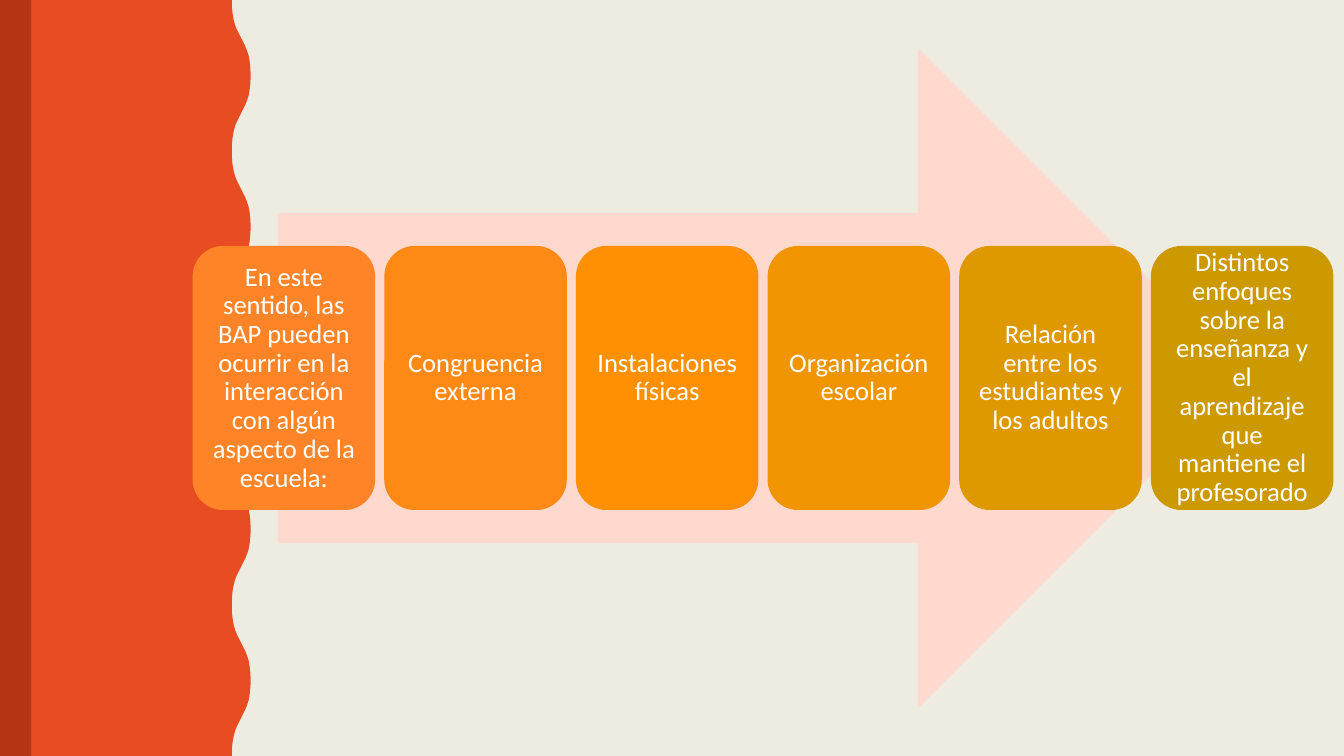
"""Build a slide of six rounded boxes in a row over a wide arrow."""
from pptx import Presentation
from pptx.dml.color import RGBColor
from pptx.enum.shapes import MSO_SHAPE
from pptx.enum.text import MSO_ANCHOR, PP_ALIGN
from pptx.util import Pt

CREAM = RGBColor(0xEE, 0xEC, 0xE1)
RED = RGBColor(0xE8, 0x4C, 0x22)
RUST = RGBColor(0xB5, 0x35, 0x13)
PINK = RGBColor(0xFF, 0xD9, 0xCD)
WHITE = RGBColor(0xFF, 0xFF, 0xFF)

BOXES = [
    ("En este sentido, las BAP pueden ocurrir en la interacción con algún "
     "aspecto de la escuela:", RGBColor(0xFF, 0x84, 0x27)),
    ("Congruencia externa", RGBColor(0xFF, 0x89, 0x15)),
    ("Instalaciones físicas", RGBColor(0xFF, 0x90, 0x03)),
    ("Organización escolar", RGBColor(0xF0, 0x95, 0x00)),
    ("Relación entre los estudiantes y los adultos",
     RGBColor(0xDE, 0x98, 0x00)),
    ("Distintos enfoques sobre la enseñanza y el aprendizaje que mantiene "
     "el profesorado", RGBColor(0xCC, 0x99, 0x00)),
]
CURVE = [(165.6, 0), (165.7, 5), (166.2, 10), (167, 14.4), (168, 18),
         (169.2, 21), (170.7, 24), (172.2, 27), (173.7, 30), (175.2, 33),
         (176.4, 36), (177.6, 39.6), (178.4, 44), (178.9, 49), (179.1, 54)]
PERIOD = 108

deck = Presentation()
deck.slide_width, deck.slide_height = Pt(960), Pt(540)
slide = deck.slides.add_slide(deck.slide_layouts[6])
slide.background.fill.solid()
slide.background.fill.fore_color.rgb = CREAM


def paint(shape, color):
    """Give a shape a flat fill with no line or shadow."""
    shape.shadow.inherit = False
    shape.fill.solid()
    shape.fill.fore_color.rgb = color
    shape.line.fill.background()


def draw(kind, left, top, width, height, color):
    """Add a flat preset shape, measured in points."""
    shape = slide.shapes.add_shape(
        kind, Pt(left), Pt(top), Pt(width), Pt(height))
    paint(shape, color)
    return shape


wave = CURVE + [(x, PERIOD - y) for x, y in CURVE[-2::-1]]
edge = [(x, y + n * PERIOD) for n in range(5) for x, y in wave]
pen = slide.shapes.build_freeform(0, 0)
pen.add_line_segments([(Pt(x), Pt(y)) for x, y in edge + [(0, 540)]])
paint(pen.convert_to_shape(), RED)

draw(MSO_SHAPE.RECTANGLE, 0, 0, 22.3, 540, RUST)
draw(MSO_SHAPE.RIGHT_ARROW, 198.6, 34.4, 692.8, 471.4, PINK)

for i, (words, color) in enumerate(BOXES):
    box = draw(MSO_SHAPE.ROUNDED_RECTANGLE,
               137.6 + i * 136.9, 175.7, 130.4, 188.6, color)
    frame = box.text_frame
    frame.word_wrap = True
    frame.vertical_anchor = MSO_ANCHOR.MIDDLE
    frame.margin_left = frame.margin_right = Pt(5.7)
    frame.margin_top = frame.margin_bottom = Pt(5.7)
    para = frame.paragraphs[0]
    para.alignment = PP_ALIGN.CENTER
    para.line_spacing = 0.9
    run = para.add_run()
    run.text = words
    run.font.name = "Calibri"
    run.font.size = Pt(19)
    run.font.color.rgb = WHITE

deck.save("out.pptx")
